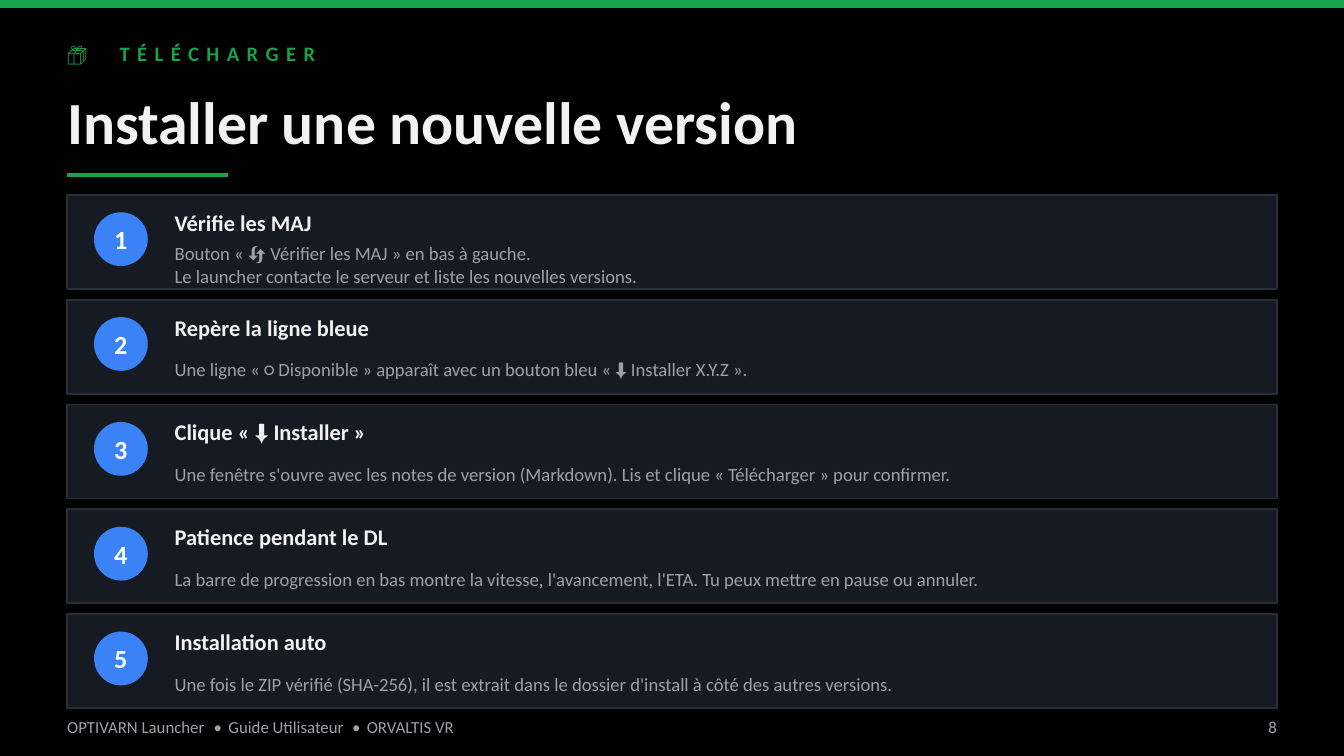
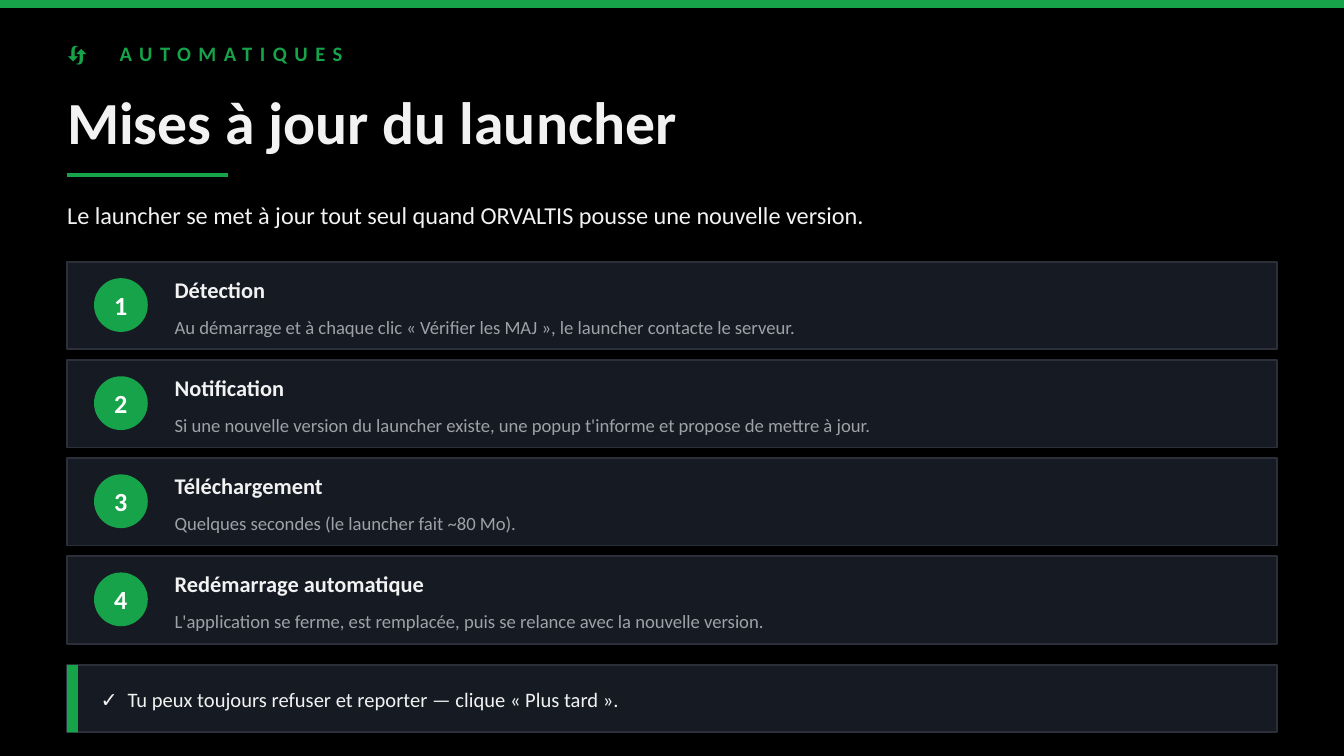
"""Build two launcher guide slides: installing a version and automatic updates."""
from lxml import etree
from pptx import Presentation
from pptx.dml.color import RGBColor
from pptx.enum.shapes import MSO_CONNECTOR, MSO_SHAPE
from pptx.enum.text import MSO_ANCHOR, PP_ALIGN
from pptx.oxml.ns import qn
from pptx.util import Inches, Pt

RECTANGLE, OVAL = MSO_SHAPE.RECTANGLE, MSO_SHAPE.OVAL
STRAIGHT = MSO_CONNECTOR.STRAIGHT
MIDDLE = MSO_ANCHOR.MIDDLE
LEFT, CENTER, RIGHT = PP_ALIGN.LEFT, PP_ALIGN.CENTER, PP_ALIGN.RIGHT

COLORS = {
    "background": "000000", "green": "16A34A", "blue": "3B82F6", "card": "161B23",
    "border": "2A2F3A", "text": "F2F2F2", "muted": "A0A0A8", "white": "FFFFFF",
}
FORMATS = {
    "kicker": {"size": 11, "bold": True, "color": "green", "tabs": [0.39], "spacing": 4},
    "title": {"size": 32, "bold": True, "color": "text"},
    "footer": {"size": 9, "bold": False, "color": "muted", "tabs": [1.09, 1.2, 2.12, 2.23]},
    "page number": {"size": 9, "bold": False, "color": "muted"},
    "intro": {"size": 13, "bold": False, "color": "text"},
    "number": {"size": 14, "bold": True, "color": "white"},
    "step": {"size": 12, "bold": True, "color": "text"},
    "detail": {"size": 10, "bold": False, "color": "muted"},
    "callout": {"size": 11, "bold": False, "color": "text", "tabs": [0.2]},
}
MARGIN, CONTENT_WIDTH = 0.5, 9
CARD_GAP, BADGE_SIZE = 0.08, 0.4
FOOTER = "OPTIVARN Launcher\t•\tGuide Utilisateur\t•\tORVALTIS VR"

SLIDES = [
    {
        "kicker": "📦\tTÉLÉCHARGER",
        "title": "Installer une nouvelle version",
        "number": "8",
        "cards": {"top": 1.45, "height": 0.7, "badge_offset": 0.13,
                  "detail_height": 0.4, "badge": "blue"},
        "steps": [
            ("Vérifie les MAJ",
             ["Bouton « 🔄 Vérifier les MAJ » en bas à gauche.",
              "Le launcher contacte le serveur et liste les nouvelles versions."]),
            ("Repère la ligne bleue",
             ["Une ligne « ○ Disponible » apparaît avec un bouton bleu « ⬇ Installer X.Y.Z »."]),
            ("Clique « ⬇ Installer »",
             ["Une fenêtre s'ouvre avec les notes de version (Markdown). "
              "Lis et clique « Télécharger » pour confirmer."]),
            ("Patience pendant le DL",
             ["La barre de progression en bas montre la vitesse, l'avancement, l'ETA. "
              "Tu peux mettre en pause ou annuler."]),
            ("Installation auto",
             ["Une fois le ZIP vérifié (SHA-256), il est extrait dans le dossier d'install "
              "à côté des autres versions."]),
        ],
    },
    {
        "kicker": "🔄\tAUTOMATIQUES",
        "title": "Mises à jour du launcher",
        "intro": "Le launcher se met à jour tout seul quand ORVALTIS pousse une nouvelle version.",
        "cards": {"top": 1.95, "height": 0.65, "badge_offset": 0.12,
                  "detail_height": 0.32, "badge": "green"},
        "steps": [
            ("Détection",
             ["Au démarrage et à chaque clic « Vérifier les MAJ », le launcher contacte le serveur."]),
            ("Notification",
             ["Si une nouvelle version du launcher existe, une popup t'informe "
              "et propose de mettre à jour."]),
            ("Téléchargement", ["Quelques secondes (le launcher fait ~80 Mo)."]),
            ("Redémarrage automatique",
             ["L'application se ferme, est remplacée, puis se relance avec la nouvelle version."]),
        ],
        "callout": "✓\tTu peux toujours refuser et reporter — clique « Plus tard ».",
    },
]


def rgb(name):
    return RGBColor.from_string(COLORS[name])


def add_tabs(para, stops):
    tabs = etree.SubElement(para._p.get_or_add_pPr(), qn("a:tabLst"))
    for stop in stops:
        etree.SubElement(tabs, qn("a:tab"), pos=str(Inches(stop)), algn="l")


def write(shape, lines, style, align=LEFT):
    frame = shape.text_frame
    layout = {"word_wrap": True, "vertical_anchor": MIDDLE, "margin_left": 0,
              "margin_top": 0, "margin_right": 0, "margin_bottom": 0}
    for name, value in layout.items():
        setattr(frame, name, value)
    look = FORMATS[style]
    for index, line in enumerate(lines):
        para = frame.add_paragraph() if index else frame.paragraphs[0]
        para.alignment = align
        if "tabs" in look:
            add_tabs(para, look["tabs"])
        span = para.add_run()
        span.text = line
        for name, value in {"name": "Calibri", "size": Pt(look["size"]),
                            "bold": look["bold"]}.items():
            setattr(span.font, name, value)
        span.font.color.rgb = rgb(look["color"])
        if "spacing" in look:
            span.font._element.set("spc", str(look["spacing"] * 100))


def add_text(page, place, lines, style, align=LEFT):
    box = page.shapes.add_textbox(*map(Inches, place))
    write(box, lines, style, align)


def add_block(page, kind, place, fill, border=None):
    shape = page.shapes.add_shape(kind, *map(Inches, place))
    shape.shadow.inherit = False
    shape.fill.solid()
    shape.fill.fore_color.rgb = rgb(fill)
    if border:
        shape.line.color.rgb = rgb(border)
        shape.line.width = Pt(1)
    else:
        shape.line.fill.background()
    return shape


def add_header(page, content):
    page.background.fill.solid()
    page.background.fill.fore_color.rgb = rgb("background")
    add_block(page, RECTANGLE, (0, 0, 10, 0.06), "green")
    add_text(page, (MARGIN, 0.25, CONTENT_WIDTH, 0.3), [content["kicker"]], "kicker")
    add_text(page, (MARGIN, 0.55, CONTENT_WIDTH, 0.7), [content["title"]], "title")
    rule = page.shapes.add_connector(STRAIGHT, *map(Inches, (MARGIN, 1.3, 1.7, 1.3)))
    rule.line.color.rgb = rgb("green")
    rule.line.width = Pt(2)
    etree.SubElement(rule._element.spPr, qn("a:effectLst"))


def add_footer(page, number):
    add_text(page, (MARGIN, 5.28, 8, 0.25), [FOOTER], "footer")
    add_text(page, (9, 5.28, 0.5, 0.25), [number], "page number", RIGHT)


def add_steps(page, steps, cards):
    for index, (heading, details) in enumerate(steps):
        top = cards["top"] + index * (cards["height"] + CARD_GAP)
        add_block(page, RECTANGLE, (MARGIN, top, CONTENT_WIDTH, cards["height"]),
                  "card", "border")
        badge = add_block(page, OVAL, (0.7, top + cards["badge_offset"], BADGE_SIZE, BADGE_SIZE),
                          cards["badge"])
        write(badge, [str(index + 1)], "number", CENTER)
        add_text(page, (1.3, top + 0.07, 8, 0.27), [heading], "step")
        add_text(page, (1.3, top + 0.32, 8, cards["detail_height"]), details, "detail")


def add_callout(page, text):
    add_block(page, RECTANGLE, (MARGIN, 4.95, CONTENT_WIDTH, 0.5), "card", "border")
    add_block(page, RECTANGLE, (MARGIN, 4.95, 0.08, 0.5), "green")
    add_text(page, (0.75, 5, 8.5, 0.4), [text], "callout")


def main():
    deck = Presentation()
    deck.slide_width = Inches(10)
    deck.slide_height = deck.slide_width * 9 // 16
    for content in SLIDES:
        page = deck.slides.add_slide(deck.slide_layouts[6])
        add_header(page, content)
        if "number" in content:
            add_footer(page, content["number"])
        if "intro" in content:
            add_text(page, (MARGIN, 1.4, CONTENT_WIDTH, 0.4), [content["intro"]], "intro")
        add_steps(page, content["steps"], content["cards"])
        if "callout" in content:
            add_callout(page, content["callout"])
    deck.save("out.pptx")


if __name__ == "__main__":
    main()
